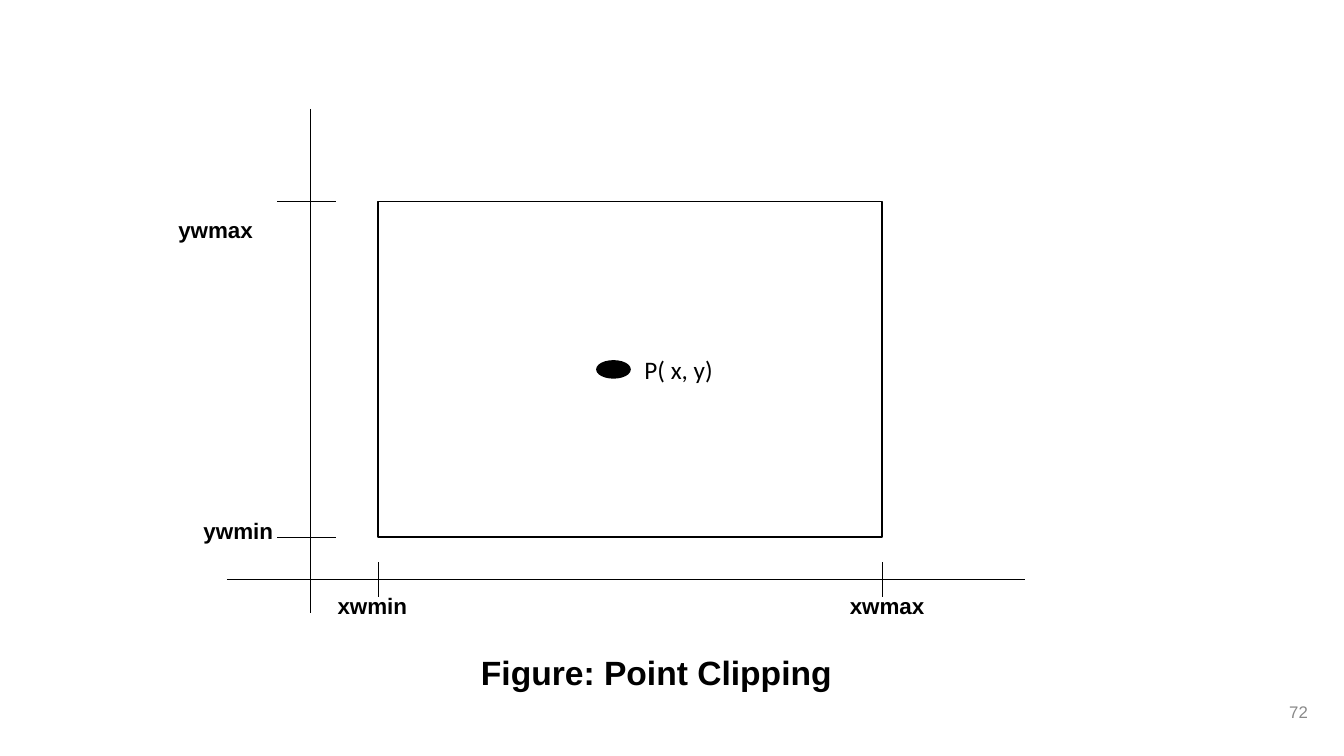
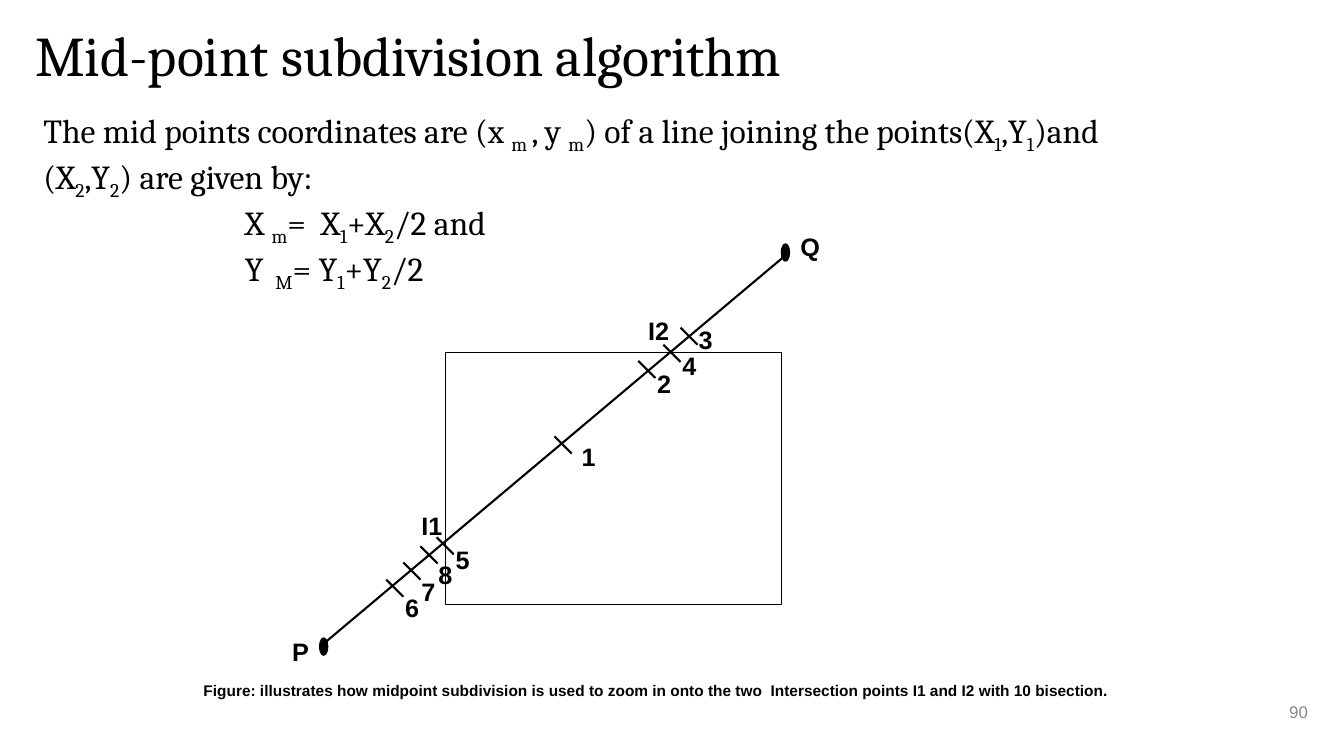
from lxml import etree
from pptx import Presentation
from pptx.dml.color import RGBColor
from pptx.enum.shapes import MSO_CONNECTOR, MSO_SHAPE
from pptx.enum.text import MSO_ANCHOR, MSO_AUTO_SIZE, PP_ALIGN
from pptx.oxml.ns import qn
from pptx.util import Inches, Pt

BLACK = RGBColor(0x00, 0x00, 0x00)
WHITE = RGBColor(0xFF, 0xFF, 0xFF)
GRAY = RGBColor(0x89, 0x89, 0x89)
SANS, SERIF, LABEL = "Arial", "Cambria", "Calibri"
TITLE_ONLY, TITLE_AND_BODY = 5, 1


class Deck:
    """Holds the shared style and the current slide."""

    def __init__(self):
        self.prs = Presentation()
        self.prs.slide_width, self.prs.slide_height = Inches(13.33), Inches(7.5)

    def slide(self, layout, number):
        self.s = self.prs.slides.add_slide(self.prs.slide_layouts[layout])
        self.text(str(number), 12.37, 6.86, 0.7, 0.4, 12, bold=False, color=GRAY,
                  align=PP_ALIGN.RIGHT, anchor=MSO_ANCHOR.MIDDLE)

    def add_runs(self, p, pieces, size, font, bold=False, color=BLACK):
        """Add runs; every second piece is a subscript."""
        for i, piece in enumerate(pieces):
            r = p.add_run()
            r.text = piece
            r.font.size, r.font.name, r.font.bold = Pt(size), font, bold
            r.font.color.rgb = color
            if i % 2:
                r._r.get_or_add_rPr().set("baseline", "-25000")

    def place(self, sp, x, y, w, h):
        """Move a placeholder and give its frame the plain text style."""
        sp.left, sp.top, sp.width, sp.height = map(Inches, (x, y, w, h))
        tf = sp.text_frame
        tf.word_wrap, tf.auto_size = True, MSO_AUTO_SIZE.NONE
        tf.vertical_anchor = MSO_ANCHOR.TOP
        return tf

    def title(self, text, x, y, w, h, size, font, bold=False):
        p = self.place(self.s.shapes.title, x, y, w, h).paragraphs[0]
        p.alignment = PP_ALIGN.LEFT
        self.add_runs(p, [text], size, font, bold)

    def body(self, paragraphs, x, y, w, h, size):
        """Fill the body with (left indent, pieces) paragraphs."""
        tf = self.place(self.s.placeholders[1], x, y, w, h)
        for i, (indent, pieces) in enumerate(paragraphs):
            p = tf.paragraphs[0] if i == 0 else tf.add_paragraph()
            p.space_before = Pt(0)
            pPr = p._p.get_or_add_pPr()
            pPr.set("marL", str(Inches(indent)))
            pPr.set("indent", "0")
            etree.SubElement(pPr, qn("a:buNone"))
            self.add_runs(p, pieces, size, SERIF)

    def text(self, text, x, y, w, h, size, bold=True, color=BLACK,
             align=PP_ALIGN.LEFT, anchor=MSO_ANCHOR.TOP):
        sp = self.s.shapes.add_textbox(*map(Inches, (x, y, w, h)))
        tf = sp.text_frame
        tf.word_wrap, tf.vertical_anchor = True, anchor
        p = tf.paragraphs[0]
        p.alignment = align
        self.add_runs(p, [text], size, SANS, bold, color)

    def shape(self, kind, x, y, w, h, fill=None):
        sp = self.s.shapes.add_shape(kind, *map(Inches, (x, y, w, h)))
        sp.shadow.inherit = False
        if fill is None:
            sp.fill.background()
        else:
            sp.fill.solid()
            sp.fill.fore_color.rgb = fill
        sp.line.color.rgb, sp.line.width = BLACK, Pt(1)
        return sp

    def line(self, x1, y1, x2, y2, width):
        cxn = self.s.shapes.add_connector(
            MSO_CONNECTOR.STRAIGHT, *map(Inches, (x1, y1, x2, y2)))
        cxn.line.color.rgb, cxn.line.width = BLACK, Pt(width)
        etree.SubElement(cxn._element.spPr, qn("a:effectLst"))


def point_clipping(deck):
    deck.slide(TITLE_ONLY, 72)
    deck.title("Figure: Point Clipping", 4.67, 6.42, 4, 0.51, 24, SANS, bold=True)

    # Axes
    axis_x, axis_y = 3.08, 5.75
    deck.line(axis_x, 1.08, axis_x, 6.08, 0.5)
    deck.line(2.25, axis_y, 10.17, axis_y, 0.5)

    # Clipping window with the point inside
    left, top, width, height = 3.75, 2, 5, 3.33
    window = deck.shape(MSO_SHAPE.RECTANGLE, left, top, width, height, WHITE)
    tf = window.text_frame
    tf.margin_left, tf.vertical_anchor = Inches(1.06), MSO_ANCHOR.MIDDLE
    tf.paragraphs[0].alignment = PP_ALIGN.CENTER
    deck.add_runs(tf.paragraphs[0], ["P( x, y)"], 18, LABEL)
    deck.shape(MSO_SHAPE.OVAL, 5.92, 3.58, 0.33, 0.17, BLACK)

    # Ticks at the window limits
    for y in (top, top + height):
        deck.line(2.75, y, 3.33, y, 0.5)
    for x in (left, left + width):
        deck.line(x, 5.58, x, 5.92, 0.5)

    # Limit names
    for name, x, y in (("ywmax", 1.67, 2.1), ("ywmin", 1.92, 5.08),
                       ("xwmin", 3.25, 5.83), ("xwmax", 8.33, 5.83)):
        deck.text(name, x, y, 1, 0.37, 16)


def midpoint_subdivision(deck):
    deck.slide(TITLE_AND_BODY, 90)
    deck.title("Mid-point subdivision algorithm", 0.25, 0.15, 11.08, 0.77, 40, SERIF)
    deck.body([
        (0, ["The mid points coordinates are (x ", "m ", ", y ", "m",
             ") of a line joining the points(X", "1", ",Y", "1", ")and (X", "2",
             ",Y", "2", ") are given by:"]),
        (2, ["X ", "m", "=  X", "1", "+X", "2", "/2 and"]),
        (2, ["Y ", " M", "= Y", "1", "+Y", "2", "/2"]),
    ], 0.33, 1.04, 11.62, 2.02, 24)

    # Window and the line PQ
    deck.shape(MSO_SHAPE.RECTANGLE, 4.42, 3.5, 3.33, 2.5)
    deck.line(7.83, 2.5, 3.17, 6.42, 1.5)
    for x, y in ((7.75, 2.42), (3.17, 6.33)):
        deck.shape(MSO_SHAPE.OVAL, x, y, 0.08, 0.17, BLACK)

    # Bisection ticks: tick corner, number, offset of the number
    tick = 0.17
    for x, y, number, dx, dy in (
            (5.5, 4.33, "1", 0.17, 0), (6.33, 3.58, "2", 0.09, 0.02),
            (6.75, 3.25, "3", 0.08, -0.08), (6.58, 3.42, "4", 0.09, 0.01),
            (4.33, 5.33, "5", 0.09, 0.02), (3.83, 5.75, "6", 0.09, 0.08),
            (4, 5.58, "7", 0.08, 0.09), (4.17, 5.42, "8", 0.08, 0.08)):
        deck.line(x, y, x + tick, y + tick, 1.5)
        deck.text(number, x + dx, y + dy, 0.35, 0.4, 18)

    # End points and intersections
    for name, x, y in (("Q", 7.84, 2.25), ("P", 2.8, 6.26),
                       ("I1", 4.08, 5.01), ("I2", 6.33, 3.08)):
        deck.text(name, x, y, 0.58, 0.4, 18)

    # Caption
    deck.text("Figure: illustrates how midpoint subdivision is used to zoom in onto "
              "the two  Intersection points I1 and I2 with 10 bisection.",
              1.92, 6.71, 9.67, 0.29, 11)


def main():
    deck = Deck()
    point_clipping(deck)
    midpoint_subdivision(deck)
    deck.prs.save("out.pptx")


if __name__ == "__main__":
    main()
